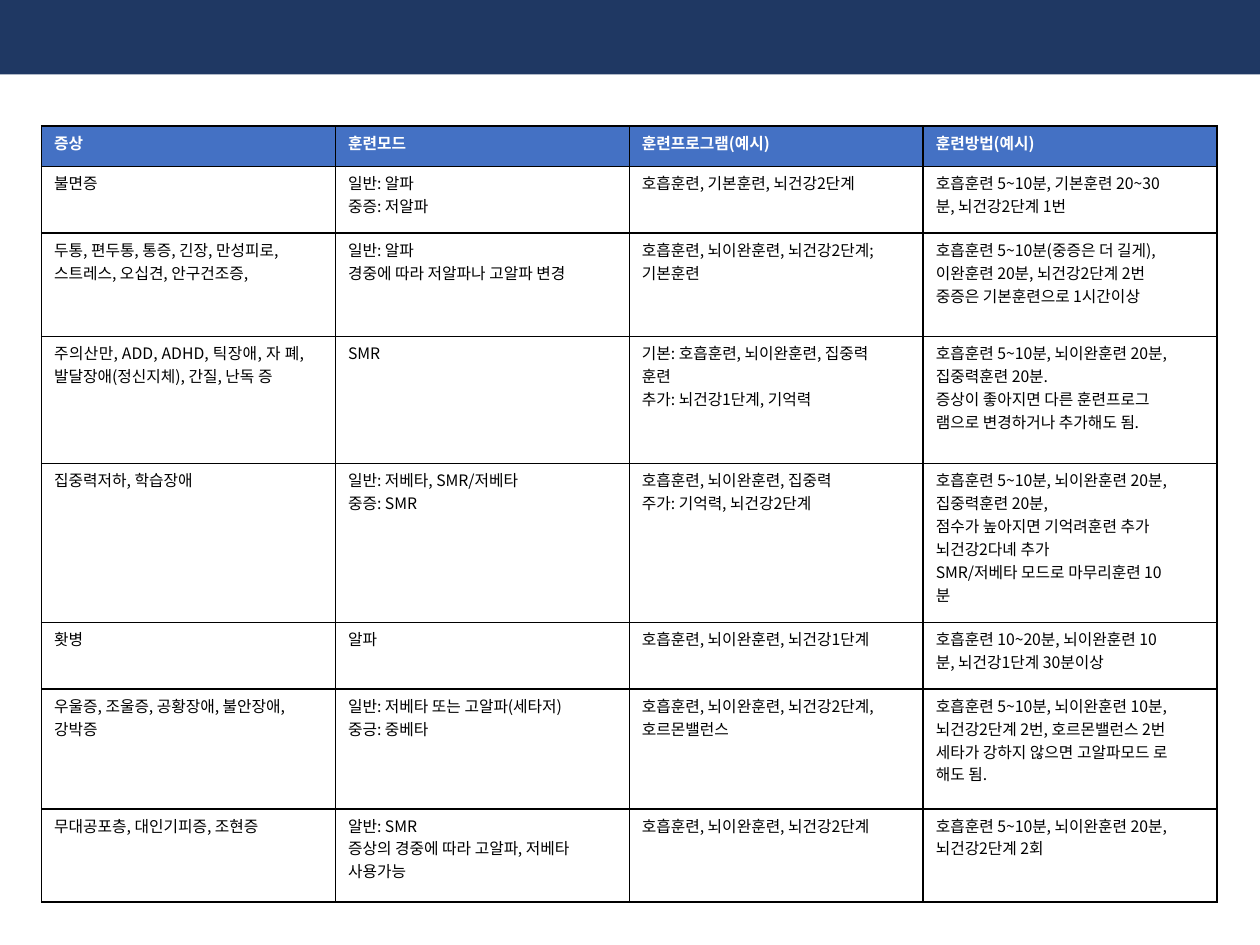
"""Build a slide with a table of symptoms, training modes, programs and methods."""
import pptx
import pptx.dml.color
import pptx.enum.shapes
import pptx.enum.text
import pptx.oxml
import pptx.oxml.ns
import pptx.util
from pptx.util import Inches

COLORS = {"bar": "1F3863", "header": "4471C4", "white": "FFFFFF", "black": "000000"}
FONT = "Noto Sans CJK KR"
ROW_HEIGHTS = [0.32, 0.53, 0.82, 1.01, 1.26, 0.53, 0.95, 0.74]
COLUMN_WIDTH = 9.33 / 4
NARROW_ROWS = (2, 3)
JUSTIFIED_ROW = 3
ROWS = [
    ["증상", "훈련모드", "훈련프로그램(예시)", "훈련방법(예시)"],
    ["불면증", "일반: 알파\n중증: 저알파", "호흡훈련, 기본훈련, 뇌건강2단계",
     "호흡훈련 5~10분, 기본훈련 20~30\n분, 뇌건강2단계 1번"],
    ["두통, 편두통, 통증, 긴장, 만성피로, 스트레스, 오십견, 안구건조증,",
     "일반: 알파\n경중에 따라 저알파나 고알파 변경",
     "호흡훈련, 뇌이완훈련, 뇌건강2단계;\v기본훈련",
     "호흡훈련 5~10분(중증은 더 길게),\v이완훈련 20분, 뇌건강2단계 2번\v중증은 기본훈련으로 1시간이상"],
    ["주의산만, ADD, ADHD, 틱장애, 자 폐, 발달장애(정신지체), 간질, 난독 증", "SMR",
     "기본: 호흡훈련, 뇌이완훈련, 집중력\n훈련\n추가: 뇌건강1단계, 기억력",
     "호흡훈련 5~10분, 뇌이완훈련 20분,\n집중력훈련 20분.\n"
     "증상이 좋아지면 다른 훈련프로그\v램으로 변경하거나 추가해도 됨."],
    ["집중력저하, 학습장애", "일반: 저베타, SMR/저베타\n중증: SMR",
     "호흡훈련, 뇌이완훈련, 집중력\n주가: 기억력, 뇌건강2단계",
     "호흡훈련 5~10분, 뇌이완훈련 20분,\n집중력훈련 20분,\n"
     "점수가 높아지면 기억려훈련 추가\v뇌건강2다녜 추가\nSMR/저베타 모드로 마무리훈련 10\n분"],
    ["홧병", "알파", "호흡훈련, 뇌이완훈련, 뇌건강1단계",
     "호흡훈련 10~20분, 뇌이완훈련 10\n분, 뇌건강1단계 30분이상"],
    ["우울증, 조울증, 공황장애, 불안장애,\v강박증",
     "일반: 저베타 또는 고알파(세타저)\v중긍: 중베타",
     "호흡훈련, 뇌이완훈련, 뇌건강2단계,\v호르몬밸런스",
     "호흡훈련 5~10분, 뇌이완훈련 10분,\v뇌건강2단계 2번, 호르몬밸런스 2번\v"
     "세타가 강하지 않으면 고알파모드 로\v해도 됨."],
    ["무대공포층, 대인기피증, 조현증",
     "알반: SMR\n증상의 경중에 따라 고알파, 저베타\v사용가능",
     "호흡훈련, 뇌이완훈련, 뇌건강2단계",
     "호흡훈련 5~10분, 뇌이완훈련 20분,\n뇌건강2단계 2회"],
]


def rgb(name):
    return pptx.dml.color.RGBColor.from_string(COLORS[name])


def add_borders(cell):
    properties = cell._tc.get_or_add_tcPr()
    for side in ("lnL", "lnR", "lnT", "lnB"):
        properties.append(pptx.oxml.parse_xml(
            f'<a:{side} {pptx.oxml.ns.nsdecls("a")} w="12700"><a:solidFill>'
            f'<a:srgbClr val="{COLORS["black"]}"/></a:solidFill></a:{side}>'))


presentation = pptx.Presentation()
presentation.slide_width = Inches(10)
presentation.slide_height = Inches(7.5)
slide = presentation.slides.add_slide(presentation.slide_layouts[6])

top_bar = slide.shapes.add_shape(
    pptx.enum.shapes.MSO_SHAPE.RECTANGLE, 0, 0, Inches(10), Inches(0.59))
top_bar.shadow.inherit = False
top_bar.fill.solid()
top_bar.fill.fore_color.rgb = rgb("bar")
top_bar.line.fill.background()

table = slide.shapes.add_table(
    len(ROWS), 4, Inches(0.33), Inches(1), Inches(9.33), Inches(sum(ROW_HEIGHTS))).table
table.horz_banding = False
for column in table.columns:
    column.width = Inches(COLUMN_WIDTH)

for row_index, texts in enumerate(ROWS):
    table.rows[row_index].height = Inches(ROW_HEIGHTS[row_index])
    is_header = row_index == 0
    for column_index, text in enumerate(texts):
        cell = table.cell(row_index, column_index)
        cell.margin_left = cell.margin_right = cell.margin_bottom = 0
        cell.margin_top = Inches(0.04)
        add_borders(cell)
        if is_header:
            cell.fill.solid()
            cell.fill.fore_color.rgb = rgb("header")
        else:
            cell.fill.background()
        cell.text_frame.text = text
        for paragraph in cell.text_frame.paragraphs:
            paragraph_properties = paragraph._p.get_or_add_pPr()
            paragraph_properties.set("marL", str(Inches(0.1)))
            if column_index == 0 and row_index in NARROW_ROWS:
                paragraph_properties.set("marR", str(Inches(0.25)))
                if row_index == JUSTIFIED_ROW:
                    paragraph.alignment = pptx.enum.text.PP_ALIGN.JUSTIFY
            for run in paragraph.runs:
                run.font.size = pptx.util.Pt(9)
                run.font.bold = is_header
                run.font.color.rgb = rgb("white" if is_header else "black")
                run.font.name = FONT
                run.font._element.append(pptx.oxml.parse_xml(
                    f'<a:ea {pptx.oxml.ns.nsdecls("a")} typeface="{FONT}"/>'))

presentation.save("out.pptx")
